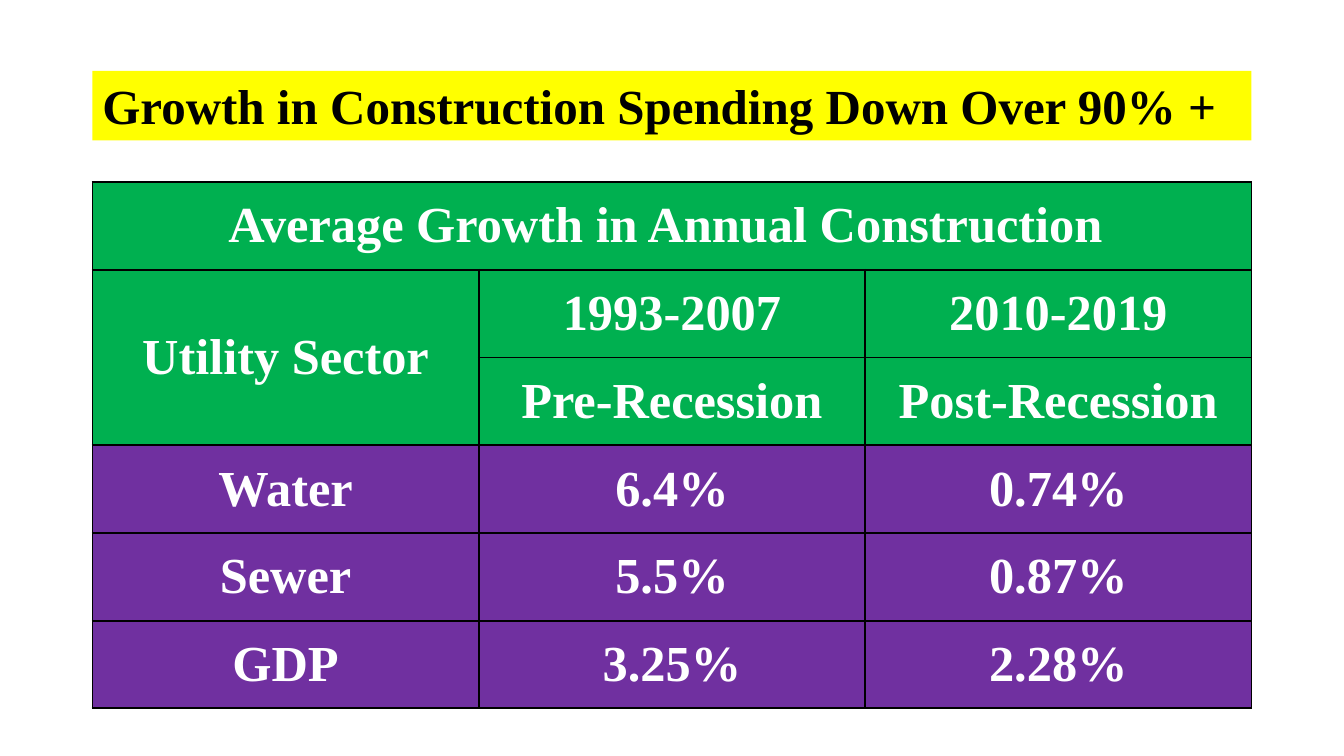
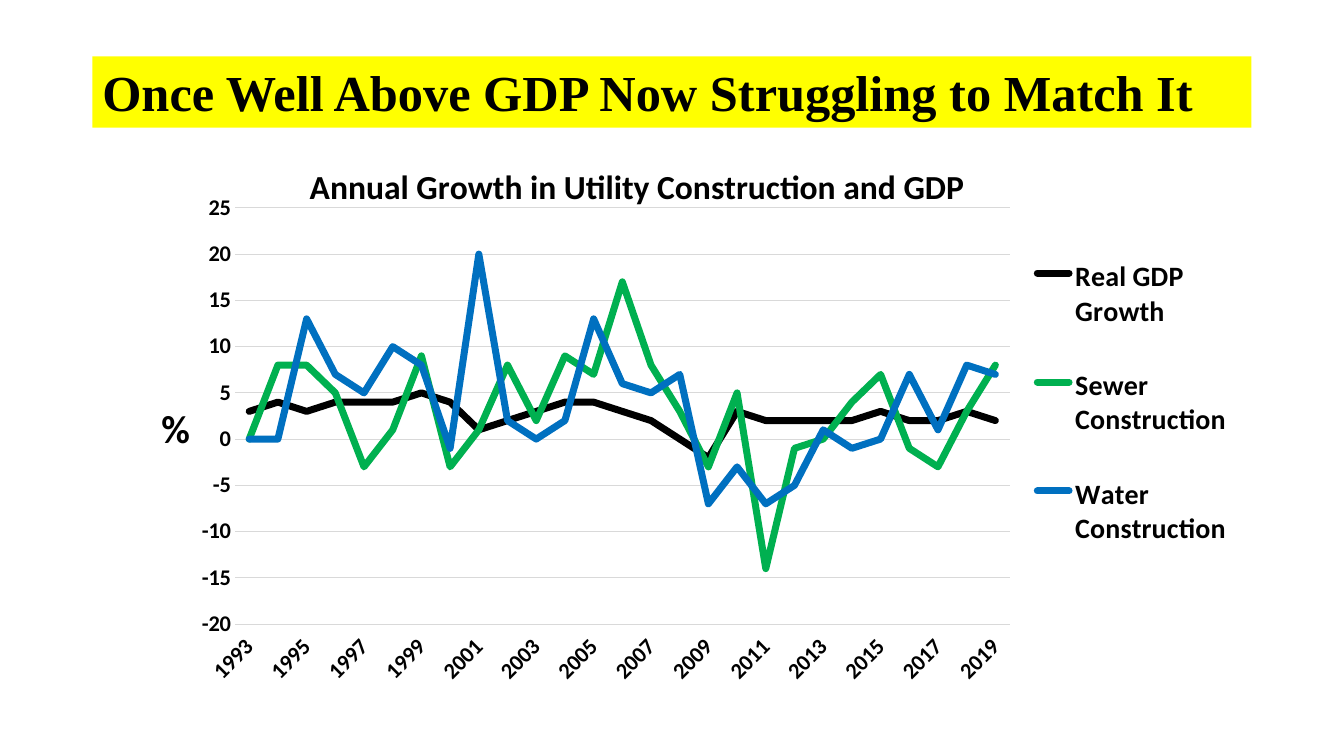
"""Build two slides on growth in utility construction: a table and a line chart."""
import pptx
import pptx.chart.data
import pptx.dml.color
import pptx.enum.chart
import pptx.enum.text
import pptx.oxml
import pptx.oxml.ns
import pptx.util
from pptx.util import Cm, Pt

COLORS = {"black": "000000", "white": "FFFFFF", "yellow": "FFFF00", "green": "00B050",
          "purple": "7030A0", "blue": "0070C0", "grid": "D9D9D9"}
SERIF, SANS = "Times New Roman", "Calibri"
LEFT, WIDTH = 2.33, 29.21
CHART_WIDTH, CHART_HEIGHT = 27.58, 13.64

TABLE_TITLE = "Growth in Construction Spending Down Over 90% +"
ROWS = [
    ("Average Growth in Annual Construction ", None, None),
    ("Utility Sector", "1993-2007", "2010-2019"),
    (None, "Pre-Recession", "Post-Recession"),
    ("Water", "6.4%", "0.74%"),
    ("Sewer", "5.5%", "0.87%"),
    ("GDP", "3.25%", "2.28%"),
]
HEADER_ROWS = 3
MERGES = [((0, 0), (0, 2)), ((1, 0), (2, 0))]

CHART_SLIDE_TITLE = "Once Well Above GDP Now Struggling to Match It"
CHART_TITLE = "Annual Growth in Utility Construction and GDP"
YEARS = [str(year) for year in range(1993, 2020)]
SERIES = [
    ("Real GDP Growth", "black", (3, 4, 3, 4, 4, 4, 5, 4, 1, 2, 3, 4, 4, 3, 2, 0, -2, 3,
                                  2, 2, 2, 2, 3, 2, 2, 3, 2)),
    ("Sewer Construction", "green", (0, 8, 8, 5, -3, 1, 9, -3, 1, 8, 2, 9, 7, 17, 8, 3, -3, 5,
                                     -14, -1, 0, 4, 7, -1, -3, 3, 8)),
    ("Water Construction", "blue", (0, 0, 13, 7, 5, 10, 8, -1, 20, 2, 0, 2, 13, 6, 5, 7, -7, -3,
                                    -7, -5, 1, -1, 0, 7, 1, 8, 7)),
]


def rgb(name):
    return pptx.dml.color.RGBColor.from_string(COLORS[name])


def set_fill(fill, color):
    fill.solid()
    fill.fore_color.rgb = rgb(color)


def set_line(line, color, width):
    set_fill(line.fill, color)
    line.width = Pt(width)


def set_font(font, size, color="black", name=SANS, bold=True):
    font.size, font.bold, font.name = Pt(size), bold, name
    font.color.rgb = rgb(color)


def write(tf, text, align=None, **style):
    p = tf.paragraphs[0]
    if align is not None:
        p.alignment = align
    r = p.add_run()
    r.text = text
    set_font(r.font, **style)


def xml(text):
    return pptx.oxml.parse_xml(text.replace(">", f" {pptx.oxml.ns.nsdecls('a', 'c')}>", 1))


def add_title(s, text, top, height, size):
    sp = s.shapes.add_textbox(Cm(LEFT), Cm(top), Cm(WIDTH), Cm(height))
    set_fill(sp.fill, "yellow")
    tf = sp.text_frame
    tf.word_wrap = True
    tf.auto_size = pptx.enum.text.MSO_AUTO_SIZE.SHAPE_TO_FIT_TEXT
    write(tf, text, size=size, name=SERIF)


def set_borders(cell, color, width):
    tc_pr = cell._tc.get_or_add_tcPr()
    for i, side in enumerate("LRTB"):
        tc_pr.insert(i, xml(f'<a:ln{side} w="{Pt(width)}"><a:solidFill><a:srgbClr '
                            f'val="{COLORS[color]}"/></a:solidFill></a:ln{side}>'))


def add_table(s):
    cols, row_height = len(ROWS[0]), 2.21
    table = s.shapes.add_table(len(ROWS), cols, Cm(LEFT), Cm(4.59), Cm(WIDTH),
                               Cm(row_height * len(ROWS))).table
    for row in table.rows:
        row.height = Cm(row_height)
    for i, row in enumerate(ROWS):
        for j, text in enumerate(row):
            cell = table.cell(i, j)
            cell.margin_left = cell.margin_right = Cm(0.18)
            cell.margin_top = cell.margin_bottom = 0
            cell.vertical_anchor = pptx.enum.text.MSO_ANCHOR.MIDDLE
            set_fill(cell.fill, "green" if i < HEADER_ROWS else "purple")
            set_borders(cell, "black", 1.5)
            if text:
                write(cell.text_frame, text, align=pptx.enum.text.PP_ALIGN.CENTER,
                      size=36, color="white", name=SERIF)
    for first, last in MERGES:
        table.cell(*first).merge(table.cell(*last))


def place(element, index, target="", **box):
    for old in element.findall(pptx.oxml.ns.qn("c:layout")):
        element.remove(old)
    inner = f'<c:layoutTarget val="{target}"/>' if target else ""
    inner += "".join(f'<c:{key}Mode val="edge"/>' for key in "xy")
    for key, length in box.items():
        share = length / (CHART_WIDTH if key in "xw" else CHART_HEIGHT)
        inner += f'<c:{key} val="{share:.4f}"/>'
    element.insert(index, xml(f"<c:layout><c:manualLayout>{inner}</c:manualLayout></c:layout>"))


def style_axis(axis, size):
    axis.major_tick_mark = axis.minor_tick_mark = pptx.enum.chart.XL_TICK_MARK.NONE
    set_font(axis.tick_labels.font, size)


def add_chart(s):
    data = pptx.chart.data.CategoryChartData()
    data.categories = YEARS
    for name, _, values in SERIES:
        data.add_series(name, values)
    chart = s.shapes.add_chart(pptx.enum.chart.XL_CHART_TYPE.LINE, Cm(3.66), Cm(3.66),
                               Cm(CHART_WIDTH), Cm(CHART_HEIGHT), data).chart
    set_font(chart.font, 10, bold=False)
    chart.plots[0].vary_by_categories = False
    for series, (_, color, _) in zip(chart.plots[0].series, SERIES):
        series.smooth = False
        set_line(series.format.line, color, 5)
        series.format.line._get_or_add_ln().set("cap", "rnd")

    chart.has_title = True
    write(chart.chart_title.text_frame, CHART_TITLE, size=24)
    place(chart.chart_title._element, 1, x=3.99, y=0.33)

    years = chart.category_axis
    style_axis(years, 16)
    years.tick_label_position = pptx.enum.chart.XL_TICK_LABEL_POSITION.LOW
    set_line(years.format.line, "grid", 0.75)
    years._element.txPr.bodyPr.set("rot", "-2700000")
    years._element.find(pptx.oxml.ns.qn("c:noMultiLvlLbl")).addprevious(
        xml('<c:tickLblSkip val="2"></c:tickLblSkip>'))

    percent = chart.value_axis
    style_axis(percent, 16)
    percent.minimum_scale, percent.maximum_scale, percent.major_unit = -20, 25, 5
    percent.format.line.fill.background()
    set_line(percent.major_gridlines.format.line, "grid", 0.75)
    tf = percent.axis_title.text_frame
    write(tf, "%", size=28)
    tf._txBody.bodyPr.set("rot", "0")
    tf._txBody.bodyPr.set("vert", "horz")
    place(percent.axis_title._element, 1, x=0.23, y=6.3)

    chart.has_legend = True
    legend = chart.legend
    legend.position = pptx.enum.chart.XL_LEGEND_POSITION.RIGHT
    legend.include_in_layout = False
    set_font(legend.font, 20)
    place(legend._element, 1, x=22.24, y=1.87, w=5.24, h=9.24)
    place(chart._chartSpace.chart.plotArea, 0, "inner", x=2.26, y=1.58, w=19.53, h=10.49)


def main():
    prs = pptx.Presentation()
    prs.slide_width, prs.slide_height = Cm(33.87), Cm(19.05)
    table_slide, chart_slide = (prs.slides.add_slide(prs.slide_layouts[6]) for _ in range(2))
    add_table(table_slide)
    add_title(table_slide, TABLE_TITLE, top=1.79, height=1.75, size=35)
    add_chart(chart_slide)
    add_title(chart_slide, CHART_SLIDE_TITLE, top=1.42, height=1.8, size=36)
    prs.save("out.pptx")


if __name__ == "__main__":
    main()
